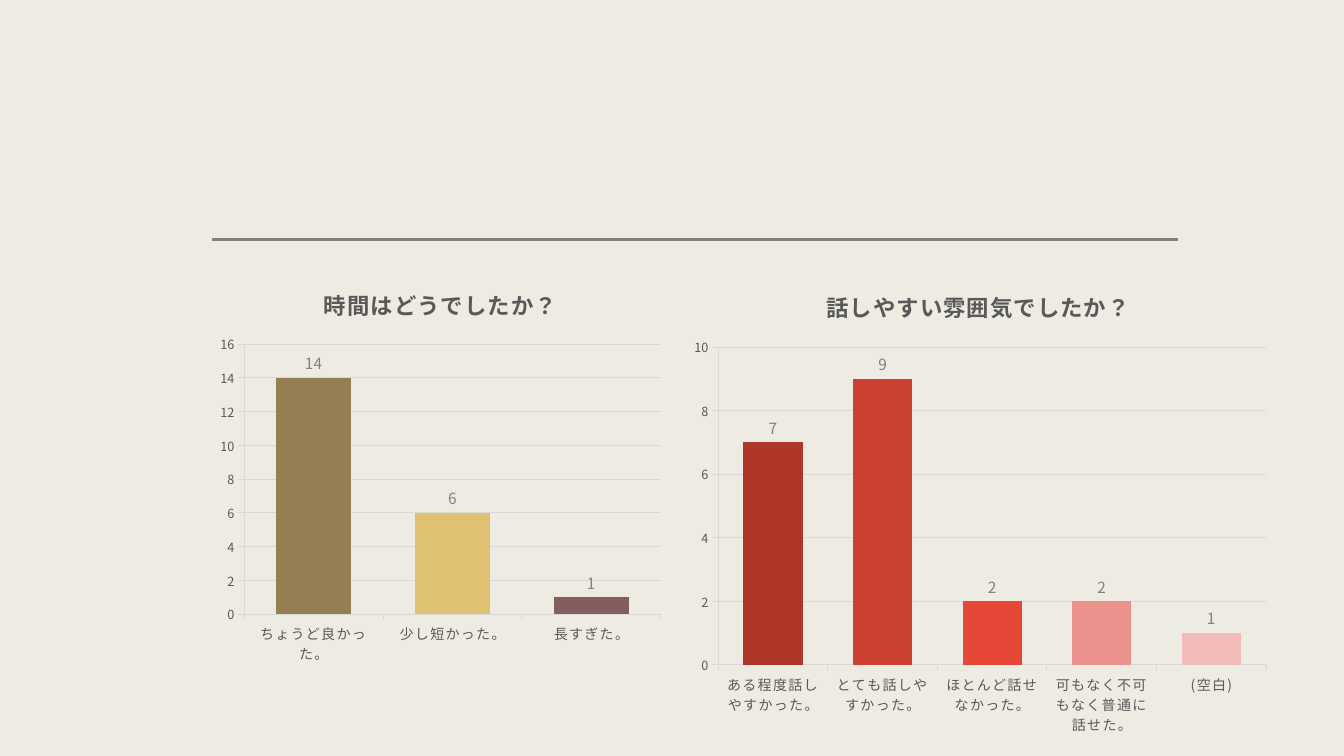
from lxml.etree import SubElement
from pptx import Presentation
from pptx.chart.data import CategoryChartData
from pptx.dml.color import RGBColor
from pptx.enum.chart import XL_CHART_TYPE, XL_LABEL_POSITION, XL_TICK_MARK
from pptx.enum.lang import MSO_LANGUAGE_ID
from pptx.enum.shapes import MSO_CONNECTOR
from pptx.oxml import parse_xml
from pptx.oxml.ns import nsdecls, qn
from pptx.util import Inches, Pt

FONT = "Noto Sans CJK JP"
PAPER = RGBColor(0xEE, 0xEB, 0xE2)
BLACK = RGBColor(0x00, 0x00, 0x00)
TEXT = RGBColor(0x59, 0x59, 0x59)
GREY = RGBColor(0x80, 0x80, 0x80)
GRID = RGBColor(0xD9, 0xD9, 0xD9)
OLIVE = RGBColor(0x94, 0x7F, 0x53)
SAND = RGBColor(0xE0, 0xC1, 0x71)
PLUM = RGBColor(0x85, 0x5D, 0x5D)
BRICK = RGBColor(0xAE, 0x37, 0x2A)
RED = RGBColor(0xCB, 0x40, 0x31)
SCARLET = RGBColor(0xE5, 0x48, 0x37)
SALMON = RGBColor(0xEB, 0x91, 0x8C)
PINK = RGBColor(0xF1, 0xBB, 0xB9)


def manual_layout(*box):
    """Return a c:layout from x, y and optional w, h in percent of the chart."""
    settings = [("xMode", "edge"), ("yMode", "edge")]
    if len(box) == 4:
        settings.insert(0, ("layoutTarget", "inner"))
    settings += [(tag, percent / 100) for tag, percent in zip("xywh", box)]
    layout = parse_xml(f"<c:layout {nsdecls('c')}><c:manualLayout/></c:layout>")
    for tag, val in settings:
        SubElement(layout[0], qn(f"c:{tag}")).set("val", str(val))
    return layout


def drop_layout(parent):
    for layout in parent.findall(qn("c:layout")):
        parent.remove(layout)


class Deck:
    def __init__(self, width=13.33, height=7.5):
        self.prs = Presentation()
        self.prs.slide_width, self.prs.slide_height = Inches(width), Inches(height)
        self.s = self.prs.slides.add_slide(self.prs.slide_layouts[6])
        self.s.background.fill.solid()
        self.s.background.fill.fore_color.rgb = PAPER

    def x(self, percent):
        return round(self.prs.slide_width * percent / 100)

    def y(self, percent):
        return round(self.prs.slide_height * percent / 100)

    def style_font(self, font, size, color, bold=False):
        font.name, font.size, font.bold = FONT, Pt(size), bold
        font.color.rgb = color
        SubElement(font._element, qn("a:ea")).set("typeface", FONT)

    def rule(self, left, right, top):
        line = self.s.shapes.add_connector(
            MSO_CONNECTOR.STRAIGHT, self.x(left), self.y(top), self.x(right), self.y(top))
        line.line.color.rgb = GREY
        line.line.width = Pt(2)
        SubElement(line._element.spPr, qn("a:effectLst"))

    def title(self, chart, text, pos):
        tf = chart.chart_title.text_frame
        tf.text = text
        r = tf.paragraphs[0].runs[0]
        self.style_font(r.font, 16, TEXT, bold=True)
        r.font.language_id = MSO_LANGUAGE_ID.JAPANESE
        r.font._element.set("spc", "100")
        chart.chart_title.include_in_layout = False
        title = chart.chart_title._element
        drop_layout(title)
        title.find(qn("c:tx")).addnext(manual_layout(*pos))

    def axis(self, axis, size):
        self.style_font(axis.tick_labels.font, size, TEXT)
        axis.major_tick_mark = XL_TICK_MARK.OUTSIDE
        axis.minor_tick_mark = XL_TICK_MARK.NONE
        axis.format.line.color.rgb = GRID
        axis.format.line.width = Pt(0.75)

    def category_axis(self, axis):
        """Style the axis with spaced labels that wrap instead of turning."""
        self.axis(axis, 10)
        axis.tick_labels.font._element.set("spc", "120")
        body = axis._element.find(qn("c:txPr")).find(qn("a:bodyPr"))
        body.set("rot", "0")
        body.set("vert", "horz")

    def value_axis(self, axis, top_value):
        self.axis(axis, 9)
        axis.minimum_scale, axis.maximum_scale, axis.major_unit = 0, top_value, 2
        axis.major_gridlines.format.line.color.rgb = GRID
        axis.major_gridlines.format.line.width = Pt(0.75)

    def columns(self, box, title, title_pos, plot_box, top_value, bars):
        """Add a column chart; bars is a list of (category, value, colour)."""
        cats, vals, colors = zip(*bars)
        data = CategoryChartData()
        data.categories = cats
        data.add_series("Series 1", vals)
        left, top, width, height = box
        chart = self.s.shapes.add_chart(
            XL_CHART_TYPE.COLUMN_CLUSTERED, self.x(left), self.y(top),
            self.x(width), self.y(height), data).chart
        self.style_font(chart.font, 10, BLACK)
        chart.has_legend = False
        self.title(chart, title, title_pos)
        self.category_axis(chart.category_axis)
        self.value_axis(chart.value_axis, top_value)

        plot = chart.plots[0]
        plot.gap_width = 85
        plot.vary_by_categories = False
        series = plot.series[0]
        for i, color in enumerate(colors):
            fill = series.points[i].format.fill
            fill.solid()
            fill.fore_color.rgb = color
        labels = series.data_labels
        labels.show_value = True
        labels.position = XL_LABEL_POSITION.OUTSIDE_END
        self.style_font(labels.font, 11, GREY)

        area = chart._chartSpace.chart.plotArea
        drop_layout(area)
        area.insert(0, manual_layout(*plot_box))


def main():
    deck = Deck()
    deck.rule(15.75, 87.65, 31.73)
    deck.columns(
        (15.75, 35.6, 34.13, 53.33), "時間はどうでしたか？", (23.6, 3.3),
        (7.1, 18.6, 90.8, 67), 16,
        [("ちょうど良かった。", 14, OLIVE),
         ("少し短かった。", 6, SAND),
         ("長すぎた。", 1, PLUM)])
    deck.columns(
        (50.79, 35.6, 44.26, 62.93), "話しやすい雰囲気でしたか？", (23.5, 3.3),
        (6, 16.4, 92.1, 66.8), 10,
        [("ある程度話しやすかった。", 7, BRICK),
         ("とても話しやすかった。", 9, RED),
         ("ほとんど話せなかった。", 2, SCARLET),
         ("可もなく不可もなく普通に話せた。", 2, SALMON),
         ("(空白)", 1, PINK)])
    deck.prs.save("out.pptx")


if __name__ == "__main__":
    main()
